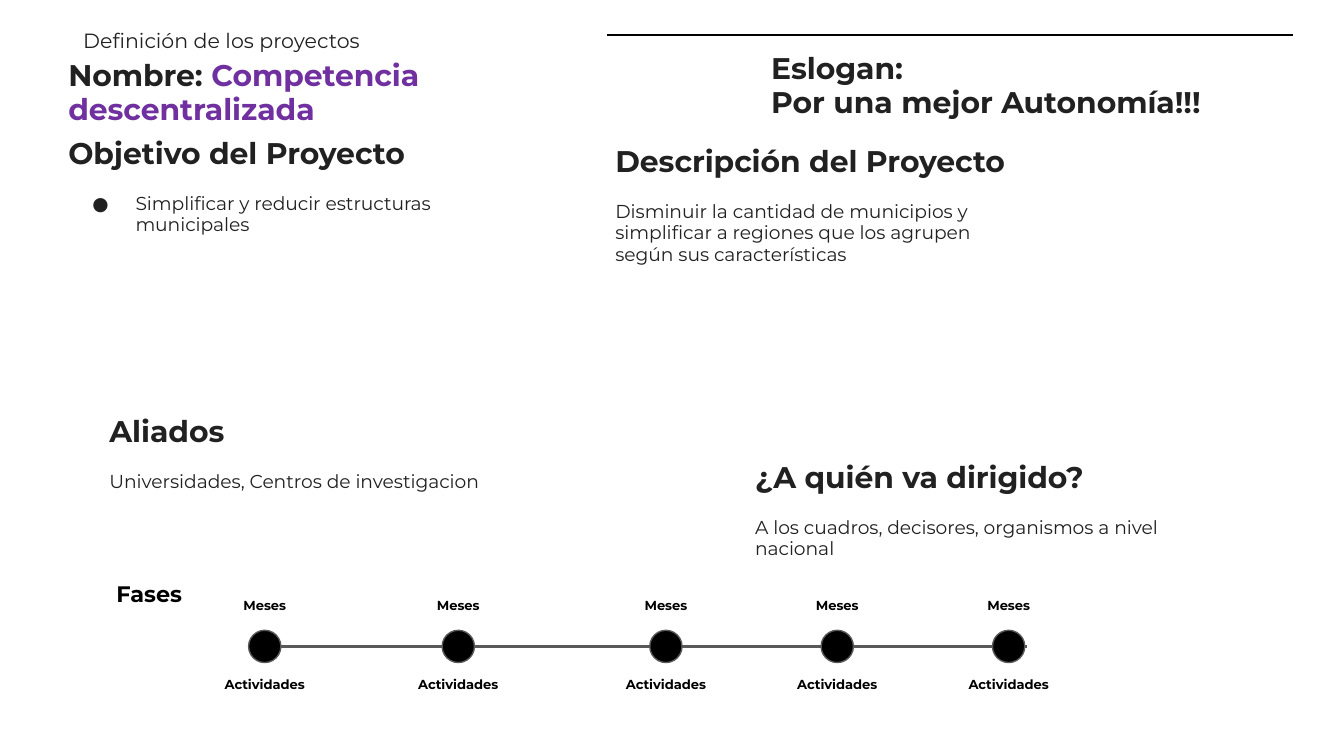
from dataclasses import dataclass

from lxml.etree import SubElement
from pptx import Presentation
from pptx.dml.color import RGBColor
from pptx.enum.shapes import MSO_CONNECTOR as Connector, MSO_SHAPE as Shape
from pptx.enum.text import MSO_ANCHOR as Anchor, PP_ALIGN as Align
from pptx.oxml.ns import qn
from pptx.slide import Slide
from pptx.util import Inches, Pt

# The slide is a 16:9 grid of square cells, 100 columns wide.
COLUMNS, ROWS = 100, 56.25
CELL = Inches(10) / COLUMNS

FONT = "Montserrat"
INK, BLACK, GRAY, PURPLE = "212121", "000000", "595959", "7030A0"

PHASE_CENTERS = [19.7, 34.1, 49.55, 62.3, 75.05]
AXIS_ROW = 48.1
DOT_SIZE = 2.4
LABEL_WIDTH, LABEL_HEIGHT = 9.6, 2.4


@dataclass
class Frame:
    left: float
    top: float
    width: float
    height: float


@dataclass
class Line:
    """One paragraph; accent is a closing run in the accent colour."""
    text: str
    size: float = 16
    bold: bool = True
    color: str = INK
    accent: str = ""
    before: float = 0
    after: float = 0
    spacing: float = 0.95
    align: Align = Align.LEFT
    bullet: bool = False


@dataclass
class Block:
    frame: Frame
    lines: list[Line]
    anchor: Anchor = Anchor.TOP


def body(text: str, after: float = 12, bullet: bool = False) -> Line:
    return Line(text, size=10, bold=False, before=12, after=after, bullet=bullet)


BLOCKS = [
    Block(Frame(4.1, 3.4, 43.5, 4.3),
          [Line("Nombre: ", accent="Competencia descentralizada")]),
    Block(Frame(5.2, 0.95, 46.8, 4.3),
          [Line("Definición de los proyectos", size=11, bold=False, after=12)],
          Anchor.MIDDLE),
    Block(Frame(4.1, 9.2, 32.8, 18.7),
          [Line("Objetivo del Proyecto"),
           body("Simplificar y reducir estructuras municipales", 0, bullet=True)]),
    Block(Frame(55.2, 33.3, 32.8, 11.1),
          [Line("¿A quién va dirigido?"),
           body("A los cuadros, decisores, organismos a nivel nacional")]),
    Block(Frame(7.15, 29.9, 32.8, 9.5),
          [Line("Aliados"), body("Universidades, Centros de investigacion")]),
    Block(Frame(56.4, 2.9, 39.6, 6.3),
          [Line("Eslogan:"), Line("Por una mejor Autonomía!!!")]),
    Block(Frame(44.8, 9.8, 32.8, 11.1),
          [Line("Descripción del Proyecto"),
           body("Disminuir la cantidad de municipios y simplificar a regiones "
                "que los agrupen según sus características", 0)]),
]


def cells(count: float) -> int:
    return round(count * CELL)


def rgb(value: str) -> RGBColor:
    return RGBColor.from_string(value)


def bounds(frame: Frame) -> tuple[int, ...]:
    return tuple(map(cells, (frame.left, frame.top, frame.width, frame.height)))


def add_bullet(para, size: float) -> None:
    props = para._p.get_or_add_pPr()
    props.set("marL", str(Inches(0.5)))
    props.set("indent", str(Inches(-0.32)))
    color = SubElement(props, qn("a:buClr"))
    SubElement(color, qn("a:srgbClr"), val=INK)
    SubElement(props, qn("a:buSzPts"), val=str(round(size * 100)))
    SubElement(props, qn("a:buFont"), typeface=FONT)
    SubElement(props, qn("a:buChar"), char="●")


def add_text(page: Slide, block: Block, inset_x: float = 1, inset_y: float = 1) -> None:
    frame = page.shapes.add_textbox(*bounds(block.frame)).text_frame
    frame.word_wrap = True
    frame.vertical_anchor = block.anchor
    frame.margin_left = frame.margin_right = cells(inset_x)
    frame.margin_top = frame.margin_bottom = cells(inset_y)
    for index, line in enumerate(block.lines):
        para = frame.add_paragraph() if index else frame.paragraphs[0]
        para.alignment = line.align
        para.line_spacing = line.spacing
        para.space_before, para.space_after = Pt(line.before), Pt(line.after)
        if line.bullet:
            add_bullet(para, line.size)
        para.font.name = FONT
        para.font.size = Pt(line.size)
        para.font.bold = line.bold
        para.font.color.rgb = rgb(line.color)
        para.add_run().text = line.text
        if line.accent:
            span = para.add_run()
            span.text = line.accent
            span.font.color.rgb = rgb(PURPLE)


def add_label(page: Slide, text: str, left: float, top: float,
              size: float = 7, align: Align = Align.CENTER) -> None:
    line = Line(text, size=size, color=BLACK, spacing=0.9, align=align)
    frame = Frame(left, top, LABEL_WIDTH, LABEL_HEIGHT)
    add_text(page, Block(frame, [line]), 0.7, 0.4)


def add_rule(page: Slide, start: float, end: float, row: float,
             color: str, weight: float) -> None:
    rule = page.shapes.add_connector(
        Connector.STRAIGHT, cells(start), cells(row), cells(end), cells(row))
    rule.line.color.rgb = rgb(color)
    rule.line.width = Pt(weight)
    SubElement(rule._element.spPr, qn("a:effectLst"))


def add_dot(page: Slide, center: float) -> None:
    half = DOT_SIZE / 2
    frame = Frame(center - half, AXIS_ROW - half, DOT_SIZE, DOT_SIZE)
    dot = page.shapes.add_shape(Shape.OVAL, *bounds(frame))
    dot.shadow.inherit = False
    dot.fill.solid()
    dot.fill.fore_color.rgb = rgb(BLACK)
    dot.line.color.rgb = rgb(GRAY)
    dot.line.width = Pt(0.75)


def add_timeline(page: Slide) -> None:
    add_label(page, "Fases", 4.65, 43, 12, Align.RIGHT)
    add_rule(page, 18.5, 76.4, AXIS_ROW, GRAY, 1.5)
    for center in PHASE_CENTERS:
        left = center - LABEL_WIDTH / 2
        add_label(page, "Meses", left, 44.2)
        add_label(page, "Actividades", left, 50.1)
        add_dot(page, center)


def main() -> None:
    deck = Presentation()
    deck.slide_width, deck.slide_height = cells(COLUMNS), cells(ROWS)
    page = deck.slides.add_slide(deck.slide_layouts[6])
    add_rule(page, 45.2, 96.2, 2.6, BLACK, 0.75)
    for block in BLOCKS:
        add_text(page, block)
    add_timeline(page)
    deck.save("out.pptx")


if __name__ == "__main__":
    main()
